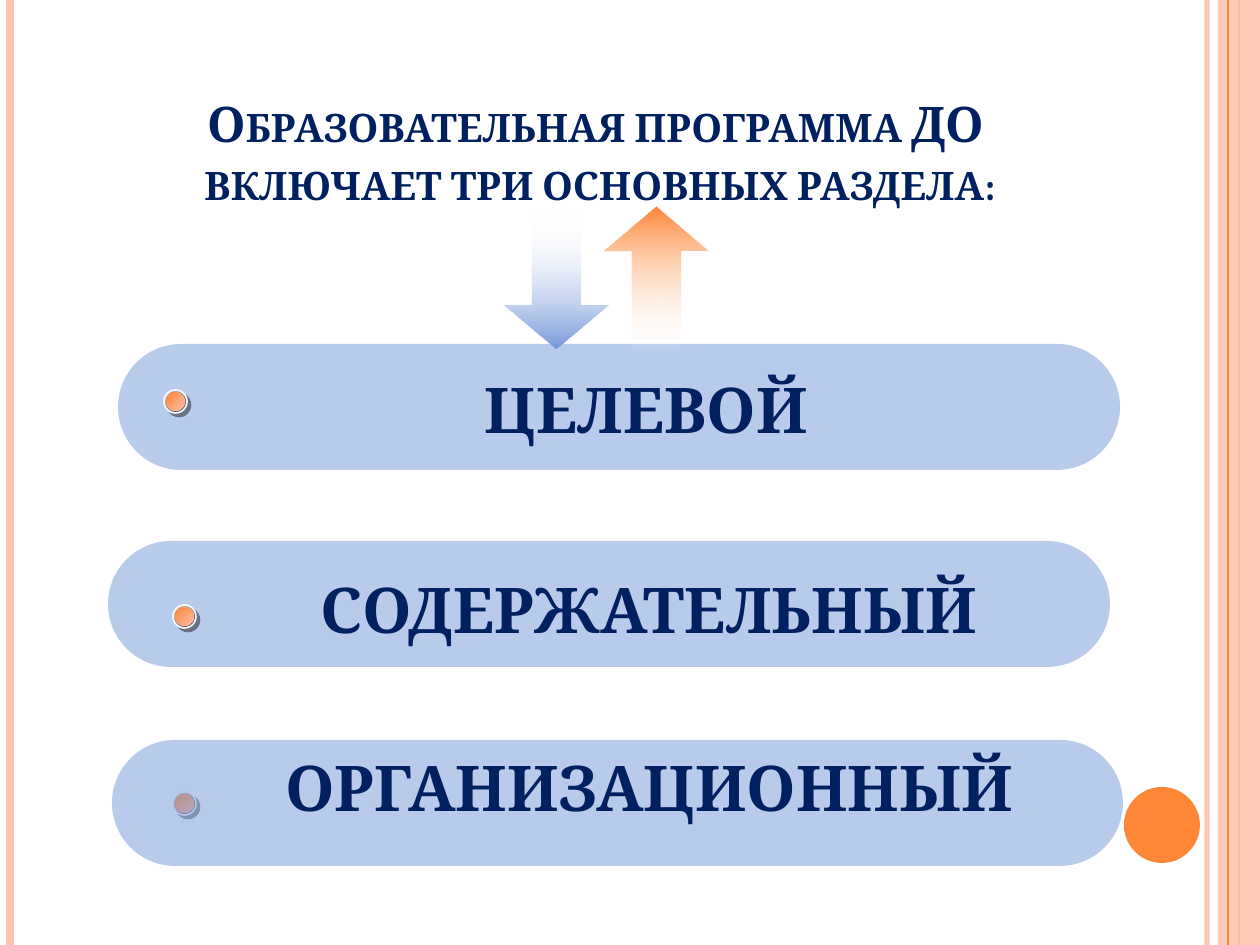
from pptx import Presentation
from pptx.dml.color import RGBColor
from pptx.enum.shapes import MSO_CONNECTOR, MSO_SHAPE
from pptx.enum.text import MSO_ANCHOR, PP_ALIGN
from pptx.oxml import parse_xml
from pptx.oxml.ns import nsdecls
from pptx.util import Pt

EMU_PER_PX = 914400 / 126
WIDTH, HEIGHT = 1260, 945
FONT = "Cambria"
WHITE = RGBColor(0xFF, 0xFF, 0xFF)
NAVY = RGBColor(0x00, 0x20, 0x60)
BLUE = RGBColor(0x75, 0x98, 0xD9)
ORANGE = RGBColor(0xFE, 0x86, 0x37)
PEACH = RGBColor(0xFE, 0xC3, 0xAE)
LIGHT_PEACH = RGBColor(0xFE, 0xBE, 0xA8)
SILVER = RGBColor(0xDD, 0xDD, 0xE1)
SLATE = RGBColor(0x22, 0x38, 0x64)
RIM = RGBColor(0xF8, 0xF8, 0xF8)


def emu(*lengths):
    return [round(length * EMU_PER_PX) for length in lengths]


def set_alpha(element, percent):
    color = element.xpath(".//a:srgbClr")[0]
    color.append(parse_xml(f'<a:alpha {nsdecls("a")} val="{percent * 1000}"/>'))


class SlideBuilder:
    def __init__(self, slide):
        self.slide = slide

    def rule(self, x, weight, color, alpha=100):
        line = self.slide.shapes.add_connector(
            MSO_CONNECTOR.STRAIGHT, *emu(x, 0, x, HEIGHT))
        line.line.width = Pt(weight)
        line.line.color.rgb = color
        line.element.spPr.append(parse_xml(f'<a:effectLst {nsdecls("a")}/>'))
        if alpha < 100:
            set_alpha(line.element.spPr, alpha)

    def shape(self, kind, box, color=None, alpha=100, parent=None):
        shape = (parent or self.slide).shapes.add_shape(kind, *emu(*box))
        shape.shadow.inherit = False
        shape.line.fill.background()
        if color is not None:
            shape.fill.solid()
            shape.fill.fore_color.rgb = color
        if alpha < 100:
            set_alpha(shape.element.spPr, alpha)
        return shape

    def gradient(self, shape, start, end, clockwise=0):
        shape.fill.gradient()
        shape.fill.gradient_angle = -clockwise % 360
        for stop, color in zip(shape.fill.gradient_stops, (start, end)):
            stop.color.rgb = color

    def arrow(self, box, rotation, color):
        arrow = self.shape(MSO_SHAPE.RIGHT_ARROW, box)
        arrow.rotation = rotation
        arrow.adjustments[0], arrow.adjustments[1] = 0.465, 0.421
        self.gradient(arrow, WHITE, color)
        set_alpha(arrow.element.spPr, 0)

    def bar(self, left, top, width):
        bar = self.shape(MSO_SHAPE.ROUNDED_RECTANGLE, (left, top, width, 126), BLUE, 50)
        bar.adjustments[0] = 0.5

    def dot(self, left, top):
        group = self.slide.shapes.add_group_shape()
        ring = self.shape(MSO_SHAPE.OVAL, (left, top, 23, 23), parent=group)
        self.gradient(ring, SILVER, SLATE, 45)
        ring.line.color.rgb = RIM
        ring.line.width = Pt(1)
        effects = ring.element.spPr.xpath("./a:effectLst")[0]
        effects.append(parse_xml(
            f'<a:outerShdw {nsdecls("a")} dist="35560" dir="2700000">'
            '<a:srgbClr val="1C1C1C"><a:alpha val="50000"/></a:srgbClr></a:outerShdw>'))
        core = self.shape(MSO_SHAPE.OVAL, (left + 2, top + 2, 19, 19), parent=group)
        self.gradient(core, ORANGE, LIGHT_PEACH, 45)

    def text(self, box, text, size, spacing=None, anchor=MSO_ANCHOR.TOP, small_caps=False):
        frame = self.slide.shapes.add_textbox(*emu(*box)).text_frame
        frame.word_wrap = True
        frame.vertical_anchor = anchor
        paragraph = frame.paragraphs[0]
        paragraph.text = text
        paragraph.alignment = PP_ALIGN.CENTER
        paragraph.line_spacing = spacing
        for run in paragraph.runs:
            run.font.name = FONT
            run.font.size = Pt(size)
            run.font.bold = True
            run.font.color.rgb = NAVY
            if small_caps:
                run.font._element.set("cap", "small")

    def label(self, box, text):
        self.text(box, text, 36, spacing=0.9)


def main():
    presentation = Presentation()
    presentation.slide_width, presentation.slide_height = emu(WIDTH, HEIGHT)
    builder = SlideBuilder(presentation.slides.add_slide(presentation.slide_layouts[6]))

    builder.rule(1207, 3, PEACH, 93)
    builder.rule(10, 4.5, PEACH)
    builder.rule(1239, 1.5, ORANGE)
    builder.shape(MSO_SHAPE.RECTANGLE, (1218, 0, 42, HEIGHT), PEACH, 87)
    builder.rule(1228, 0.75, ORANGE)
    builder.shape(MSO_SHAPE.OVAL, (1124, 787, 76, 76), ORANGE)

    builder.text((108, 59, 984, 158),
                 "Образовательная программа ДО \vвключает три основных раздела:",
                 28, anchor=MSO_ANCHOR.BOTTOM, small_caps=True)
    builder.arrow((488, 229, 135, 105), 90, BLUE)
    builder.dot(173, 792)
    builder.bar(118, 344, 1002)
    builder.label((207, 373, 879, 82), "ЦЕЛЕВОЙ")
    builder.arrow((581, 229, 149, 105), 270, ORANGE)
    builder.bar(108, 541, 1002)
    builder.bar(112, 740, 1011)
    builder.label((217, 573, 864, 82), "СОДЕРЖАТЕЛЬНЫЙ")
    builder.label((228, 751, 843, 82), "ОРГАНИЗАЦИОННЫЙ")
    builder.dot(173, 605)
    builder.dot(164, 390)

    presentation.save("out.pptx")


if __name__ == "__main__":
    main()
